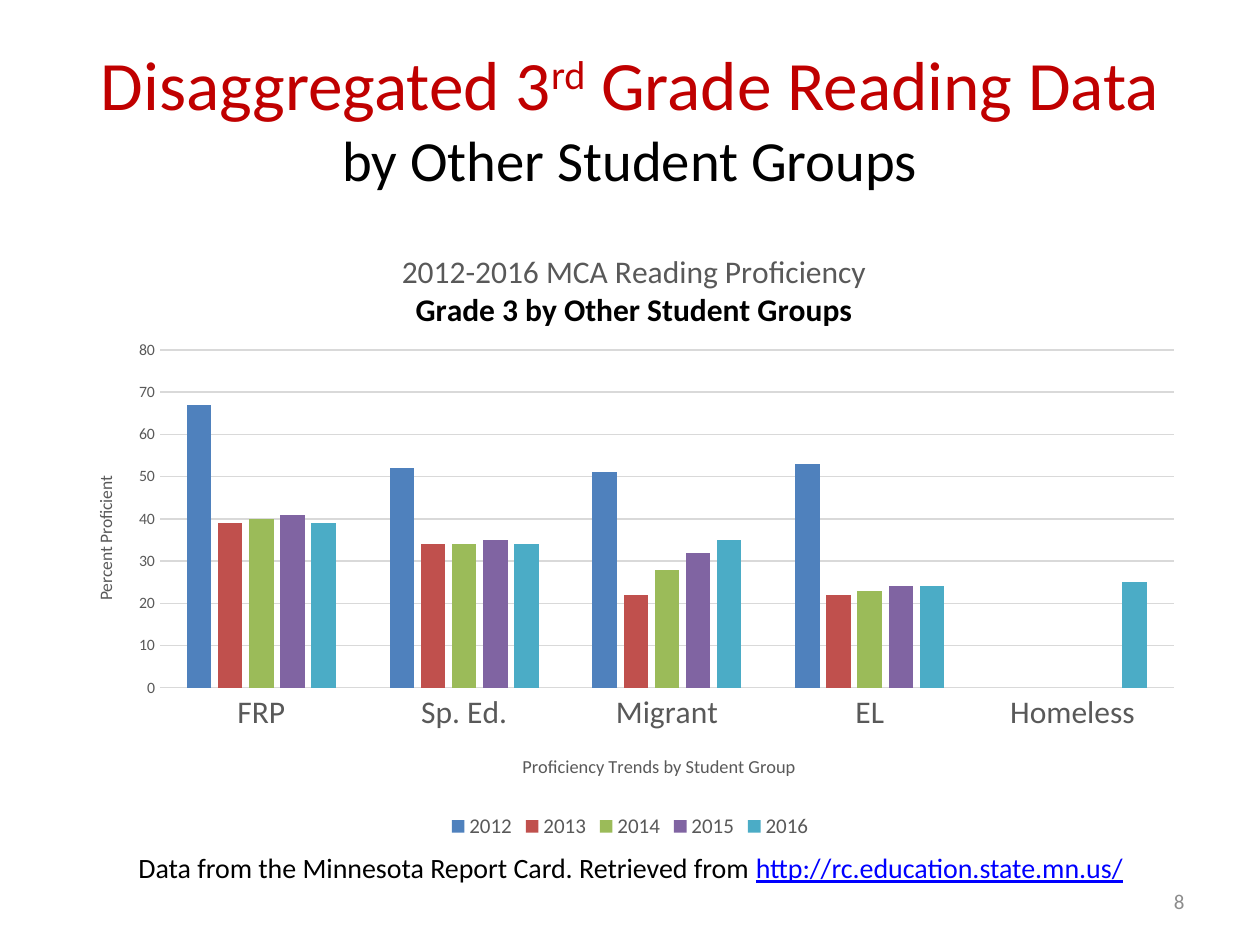
from dataclasses import dataclass

from lxml import etree
from pptx import Presentation
from pptx.chart.data import CategoryChartData
from pptx.dml.color import RGBColor
from pptx.enum.chart import XL_CHART_TYPE, XL_LEGEND_POSITION, XL_TICK_MARK
from pptx.enum.text import MSO_ANCHOR, PP_ALIGN
from pptx.oxml.ns import qn
from pptx.util import Emu, Pt

COLUMNS = XL_CHART_TYPE.COLUMN_CLUSTERED
LEGEND_BOTTOM = XL_LEGEND_POSITION.BOTTOM
NO_TICK = XL_TICK_MARK.NONE
LEFT, CENTER, RIGHT = PP_ALIGN.LEFT, PP_ALIGN.CENTER, PP_ALIGN.RIGHT
TOP, MIDDLE = MSO_ANCHOR.TOP, MSO_ANCHOR.MIDDLE

PX_PER_INCH = 126
FONT = "Calibri"
COLORS = {
    "black": "000000", "red": "C00000", "link": "0000FF",
    "label": "595959", "grid": "D9D9D9", "number": "8C8C8C",
    "2012": "4F81BD", "2013": "C0504D", "2014": "9BBB59",
    "2015": "8064A2", "2016": "4BACC6",
}


@dataclass
class Box:
    left: int
    top: int
    width: int
    height: int


@dataclass
class Piece:
    text: str
    size: float
    color: str
    bold: bool = False
    underline: bool = False
    raised: bool = False


@dataclass
class TextBlock:
    box: Box
    lines: list[list[Piece]]
    align: PP_ALIGN = LEFT
    anchor: MSO_ANCHOR = TOP


@dataclass
class Year:
    name: str
    values: tuple


CHART = Box(63, 220, 1134, 624)
PLOT = Box(160, 350, 1014, 338)

TEXTS = [
    TextBlock(Box(63, 38, 1134, 158), [
        [Piece("Disaggregated 3", 39.6, "red"),
         Piece("rd", 39.6, "red", raised=True),
         Piece(" Grade Reading Data", 39.6, "red")],
        [Piece("by Other Student Groups", 32.4, "black")],
    ], CENTER, MIDDLE),
    TextBlock(Box(126, 844, 1071, 47), [
        [Piece("Data from the Minnesota Report Card. Retrieved from ", 16, "black"),
         Piece("http://rc.education.state.mn.us/", 16, "link", underline=True)],
    ]),
    TextBlock(Box(903, 876, 294, 50), [[Piece("8", 12, "number")]], RIGHT, MIDDLE),
]

GROUPS = ("FRP", "Sp. Ed.", "Migrant", "EL", "Homeless")
YEARS = [
    Year("2012", (67, 52, 51, 53, None)),
    Year("2013", (39, 34, 22, 22, None)),
    Year("2014", (40, 34, 28, 23, None)),
    Year("2015", (41, 35, 32, 24, None)),
    Year("2016", (39, 34, 35, 24, 25)),
]


def px(length: int) -> Emu:
    return Emu(round(length * 914400 / PX_PER_INCH))


def edges(box: Box) -> tuple:
    return px(box.left), px(box.top), px(box.width), px(box.height)


def rgb(name: str) -> RGBColor:
    return RGBColor.from_string(COLORS[name])


def style_font(font, size: float, color: str, bold=False, underline=False) -> None:
    formats = {"name": FONT, "size": Pt(size), "bold": bold, "underline": underline}
    for attribute, value in formats.items():
        setattr(font, attribute, value)
    font.color.rgb = rgb(color)


def write_lines(frame, lines: list[list[Piece]], align: PP_ALIGN) -> None:
    for index, pieces in enumerate(lines):
        paragraph = frame.add_paragraph() if index else frame.paragraphs[0]
        paragraph.alignment = align
        for piece in pieces:
            run = paragraph.add_run()
            run.text = piece.text
            style_font(run.font, piece.size, piece.color, piece.bold, piece.underline)
            if piece.raised:
                run.font._element.set("baseline", "30000")


def add_text(slide, block: TextBlock) -> None:
    frame = slide.shapes.add_textbox(*edges(block.box)).text_frame
    frame.word_wrap = True
    frame.vertical_anchor = block.anchor
    write_lines(frame, block.lines, block.align)


def manual_layout(parent, after: str, values: dict) -> None:
    """Place a chart part by fractions of the chart's size."""
    for old in parent.findall(qn("c:layout")):
        parent.remove(old)
    layout = etree.Element(qn("c:layout"))
    manual = etree.SubElement(layout, qn("c:manualLayout"))
    for tag, value in values.items():
        etree.SubElement(manual, qn(f"c:{tag}")).set("val", str(value))
    previous = parent.find(qn(after)) if after else None
    if previous is None:
        parent.insert(0, layout)
    else:
        previous.addnext(layout)


def position(left: int, top: int) -> dict:
    return {"xMode": "edge", "yMode": "edge",
            "x": (left - CHART.left) / CHART.width,
            "y": (top - CHART.top) / CHART.height}


def add_title(owner, lines: list[list[Piece]], left: int, top: int) -> None:
    owner.has_title = True
    title = owner.chart_title if hasattr(owner, "chart_title") else owner.axis_title
    write_lines(title.text_frame, lines, CENTER)
    manual_layout(title._element, "c:tx", position(left, top))


def add_proficiency_chart(slide) -> None:
    data = CategoryChartData()
    data.categories = GROUPS
    for year in YEARS:
        data.add_series(year.name, year.values)
    chart = slide.shapes.add_chart(COLUMNS, *edges(CHART), data).chart
    style_font(chart.font, 10, "black")

    # Columns
    plot = chart.plots[0]
    for attribute, value in {"gap_width": 219, "overlap": -27,
                             "vary_by_categories": False}.items():
        setattr(plot, attribute, value)
    for series in plot.series:
        series.format.fill.solid()
        series.format.fill.fore_color.rgb = rgb(series.name)
    plot_area = chart._chartSpace.chart.plotArea
    manual_layout(plot_area, "", {
        "layoutTarget": "inner", **position(PLOT.left, PLOT.top),
        "w": PLOT.width / CHART.width, "h": PLOT.height / CHART.height})

    # Axes
    groups, percent = chart.category_axis, chart.value_axis
    for axis, size in ((groups, 18), (percent, 9)):
        axis.major_tick_mark = axis.minor_tick_mark = NO_TICK
        style_font(axis.tick_labels.font, size, "label")
    for attribute, value in {"minimum_scale": 0, "maximum_scale": 80,
                             "major_unit": 10}.items():
        setattr(percent, attribute, value)
    percent.format.line.fill.background()
    for line in (groups.format.line, percent.major_gridlines.format.line):
        line.color.rgb = rgb("grid")
        line.width = Pt(0.75)

    # Titles
    add_title(chart, [
        [Piece("2012-2016 MCA Reading Proficiency", 18, "label")],
        [Piece("Grade 3 by Other Student Groups", 18, "black", bold=True)],
    ], 398, 247)
    add_title(groups, [[Piece("Proficiency Trends by Student Group", 10.5, "label")]],
              519, 751)
    add_title(percent, [[Piece("Percent Proficient", 10, "label")]], 91, 473)

    # Legend
    chart.has_legend = True
    chart.legend.position = LEGEND_BOTTOM
    chart.legend.include_in_layout = False
    style_font(chart.legend.font, 12, "label")


def main() -> None:
    deck = Presentation()
    deck.slide_width, deck.slide_height = px(1260), px(945)
    slide = deck.slides.add_slide(deck.slide_layouts[6])
    add_proficiency_chart(slide)
    for block in TEXTS:
        add_text(slide, block)
    deck.save("out.pptx")


if __name__ == "__main__":
    main()
